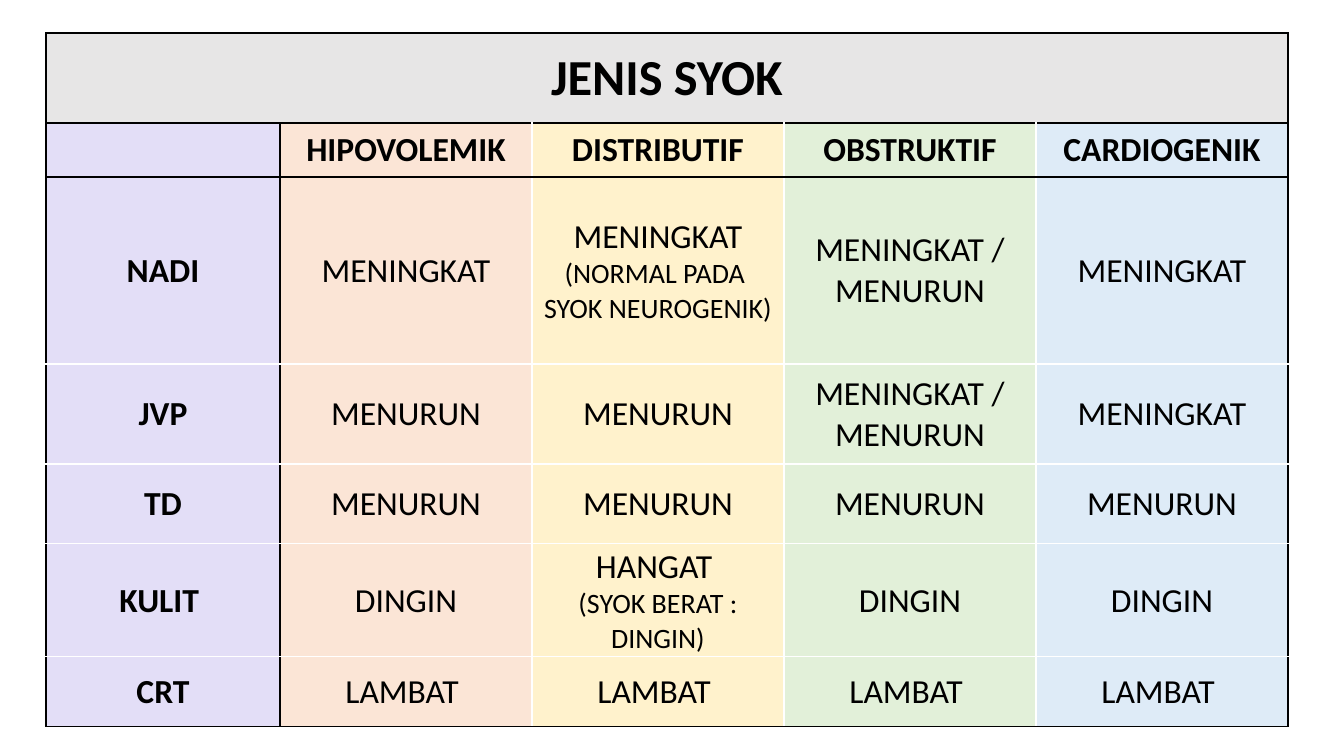
from lxml import etree
from pptx import Presentation
from pptx import util as u
from pptx.dml.color import RGBColor
from pptx.enum import text
from pptx.oxml.ns import qn

COLORS = {
    "title": "E7E6E6",
    "columns": ["E3DEF7", "FBE5D6", "FFF2CC", "E2F0D9", "DEEBF7"],
    "ink": "000000",
    "grid": "FFFFFF",
}
TITLE_SIZE, MAIN_SIZE, NOTE_SIZE = 36, 24, 20

# A cell is plain text, or a list of paragraphs made of (text, size) runs.
PULSE_DISTRIBUTIVE = [
    [("MENINGKAT ", MAIN_SIZE), ("(NORMAL PADA ", NOTE_SIZE)],
    [("SYOK NEUROGENIK)", NOTE_SIZE)],
]
SKIN_DISTRIBUTIVE = [
    [("HANGAT ", MAIN_SIZE)],
    [("(SYOK BERAT : DINGIN)", NOTE_SIZE)],
]
TITLE = [[("JENIS SYOK", TITLE_SIZE)]]
ROWS = [
    [TITLE, "", "", "", ""],
    ["", "HIPOVOLEMIK", "DISTRIBUTIF", "OBSTRUKTIF", "CARDIOGENIK"],
    ["NADI", "MENINGKAT", PULSE_DISTRIBUTIVE, "MENINGKAT / MENURUN", "MENINGKAT"],
    ["JVP", "MENURUN", "MENURUN", "MENINGKAT / MENURUN", "MENINGKAT"],
    ["TD", "MENURUN", "MENURUN", "MENURUN", "MENURUN"],
    ["KULIT ", "DINGIN", SKIN_DISTRIBUTIVE, "DINGIN", "DINGIN"],
    ["CRT", "LAMBAT ", "LAMBAT ", "LAMBAT ", "LAMBAT "],
]

# Lengths in px
SLIDE = (1344, 756)
TABLE_LEFT, TABLE_TOP = 46, 33
COLUMN_WIDTHS = [234, 252, 252, 252, 252]
ROW_HEIGHTS = [90, 54, 187, 100, 80, 113, 70]
DARK_ROW_EDGES = {0, 1, 2, len(ROW_HEIGHTS)}
DARK_COLUMN_EDGES = {0, 1, len(COLUMN_WIDTHS)}
CELL_FORMAT = {
    "vertical_anchor": text.MSO_ANCHOR.MIDDLE,
    "margin_left": u.Inches(0.01),
    "margin_right": u.Inches(0.01),
    "margin_top": u.Inches(0.01),
    "margin_bottom": 0,
}


def px(length):
    return u.Emu(round(length * 914400 / 100.8))


def set_format(target, values):
    for name, value in values.items():
        setattr(target, name, value)


def draw_borders(cell, row, column):
    """Black on the outer frame and around the headings, white elsewhere."""
    edges = {
        "a:lnL": column in DARK_COLUMN_EDGES,
        "a:lnR": column + 1 in DARK_COLUMN_EDGES,
        "a:lnT": row in DARK_ROW_EDGES,
        "a:lnB": row + 1 in DARK_ROW_EDGES,
    }
    properties = cell._tc.get_or_add_tcPr()
    for tag, dark in edges.items():
        line = etree.SubElement(properties, qn(tag), w=str(u.Pt(1)))
        fill = etree.SubElement(line, qn("a:solidFill"))
        color = COLORS["ink" if dark else "grid"]
        etree.SubElement(fill, qn("a:srgbClr"), val=color)


def write_cell(cell, content, bold):
    paragraphs = [[(content, MAIN_SIZE)]] if isinstance(content, str) else content
    frame = cell.text_frame
    for index, runs in enumerate(paragraphs):
        paragraph = frame.add_paragraph() if index else frame.paragraphs[0]
        paragraph.alignment = text.PP_ALIGN.CENTER
        for words, size in runs:
            run = paragraph.add_run()
            run.text = words
            set_format(run.font, {"name": "Calibri", "size": u.Pt(size), "bold": bold})
            run.font.color.rgb = RGBColor.from_string(COLORS["ink"])


def main():
    deck = Presentation()
    deck.slide_width, deck.slide_height = map(px, SLIDE)
    slide = deck.slides.add_slide(deck.slide_layouts[6])
    shock_table = slide.shapes.add_table(
        len(ROW_HEIGHTS), len(COLUMN_WIDTHS), px(TABLE_LEFT), px(TABLE_TOP),
        px(sum(COLUMN_WIDTHS)), px(sum(ROW_HEIGHTS))).table
    set_format(shock_table, {"first_row": False, "horz_banding": False})
    for column, width in zip(shock_table.columns, COLUMN_WIDTHS):
        column.width = px(width)
    for row, height in zip(shock_table.rows, ROW_HEIGHTS):
        row.height = px(height)
    shock_table.cell(0, 0).merge(shock_table.cell(0, len(COLUMN_WIDTHS) - 1))

    for r, contents in enumerate(ROWS):
        for c, content in enumerate(contents):
            cell = shock_table.cell(r, c)
            if cell.is_spanned:
                continue
            set_format(cell, CELL_FORMAT)
            draw_borders(cell, r, c)
            cell.fill.solid()
            fill = COLORS["columns"][c] if r else COLORS["title"]
            cell.fill.fore_color.rgb = RGBColor.from_string(fill)
            if content:
                write_cell(cell, content, bold=r < 2 or c == 0)
    deck.save("out.pptx")


if __name__ == "__main__":
    main()
